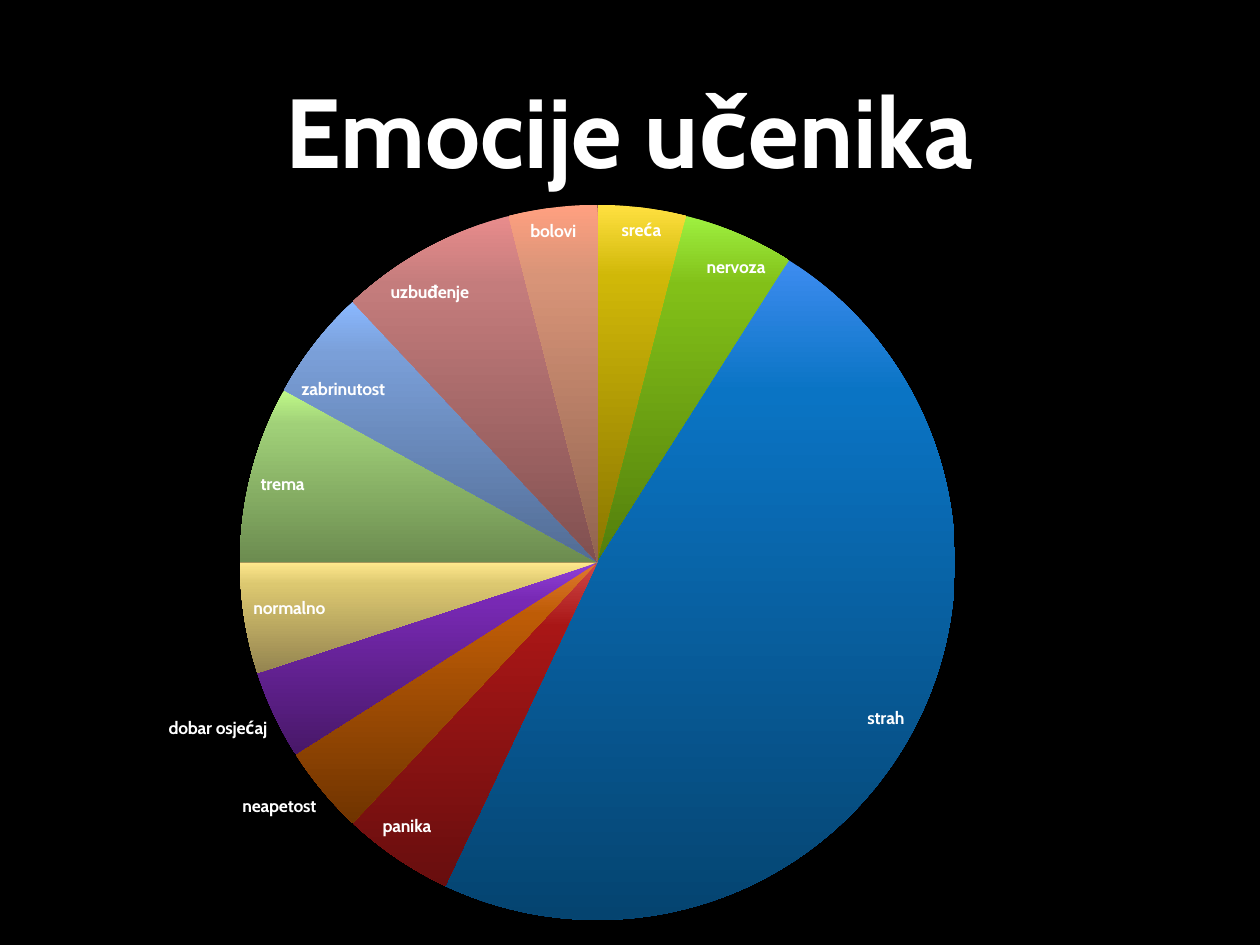
"""Build a slide with a pie chart of pupils' emotions."""
from copy import deepcopy

from lxml import etree
from pptx import Presentation
from pptx.chart.data import CategoryChartData
from pptx.dml.color import RGBColor
from pptx.enum.chart import XL_CHART_TYPE, XL_LABEL_POSITION
from pptx.enum.text import MSO_ANCHOR, PP_ALIGN
from pptx.oxml.ns import qn
from pptx.util import Inches, Pt

PIE = XL_CHART_TYPE.PIE
BEST_FIT = XL_LABEL_POSITION.BEST_FIT
MIDDLE = MSO_ANCHOR.MIDDLE
CENTER = PP_ALIGN.CENTER

TITLE = "Emocije učenika"
FONT = "Cabin"
EMOTIONS = [
    ("sreća", 4, "yellow"),
    ("nervoza", 5, "green"),
    ("strah", 48, "blue"),
    ("panika", 5, "red"),
    ("neapetost", 4, "orange"),
    ("dobar osjećaj", 4, "purple"),
    ("normalno", 5, "pale yellow"),
    ("trema", 8, "pale green"),
    ("zabrinutost", 5, "pale blue"),
    ("uzbuđenje", 8, "pale red"),
    ("bolovi", 4, "pale orange"),
]
COLORS = {"background": "000000", "text": "FFFFFF"}
GRADIENTS = {
    "yellow": ("FFE040", "D0B808", "8A7600"),
    "green": ("9EF040", "82C018", "527E0C"),
    "blue": ("3D8CF0", "0A74C4", "054470"),
    "red": ("D04848", "A81616", "680E0E"),
    "orange": ("E07830", "BE5C06", "703400"),
    "purple": ("9040D8", "7829B4", "481868"),
    "pale yellow": ("FFE88C", "DCC870", "948450"),
    "pale green": ("C0FA88", "A0D078", "6C8C50"),
    "pale blue": ("8AB8FF", "7A9FD8", "526C94"),
    "pale red": ("E88C8C", "C47C7C", "805050"),
    "pale orange": ("FFA080", "D89478", "906450"),
}
STOPS = (0, 0.2, 1)
WIDTH, HEIGHT = 10, 7.5
TITLE_AREA = (0.85, 0.12, 8.29, 1.81)
CHART_AREA = (-0.11, 0.9, 10.11, 6.6)
PLOT = {"x": 0.04, "y": 0.11, "w": 0.88, "h": 0.86}


def style_font(font, size):
    font.name = FONT
    font.size = Pt(size)
    font.bold = True
    font.color.rgb = RGBColor.from_string(COLORS["text"])


def add_title(page):
    box = page.shapes.add_textbox(*map(Inches, TITLE_AREA))
    frame = box.text_frame
    frame.word_wrap = True
    frame.vertical_anchor = MIDDLE
    frame.text = TITLE
    para = frame.paragraphs[0]
    para.alignment = CENTER
    style_font(para.runs[0].font, 56)


def place_plot(chart):
    plot_area = chart.plots[0]._element.getparent()
    for old in plot_area.findall(qn("c:layout")):
        plot_area.remove(old)
    layout = etree.Element(qn("c:layout"))
    manual = etree.SubElement(layout, qn("c:manualLayout"))
    settings = {"layoutTarget": "inner", "xMode": "edge", "yMode": "edge", **PLOT}
    for name, value in settings.items():
        etree.SubElement(manual, qn(f"c:{name}"), val=str(value))
    plot_area.insert(0, layout)


def fill_slices(series):
    for index, (_, _, color) in enumerate(EMOTIONS):
        point_format = series.points[index].format
        point_format.line.fill.background()
        fill = point_format.fill
        fill.gradient()
        fill.gradient_angle = 270
        stop_list = series._element.xpath(".//a:gsLst")[-1]
        stop_list.insert(1, deepcopy(stop_list[0]))
        for stop, position, shade in zip(fill.gradient_stops, STOPS, GRADIENTS[color]):
            stop.position = position
            stop.color.rgb = RGBColor.from_string(shade)


def add_pie(page):
    names, values, _ = zip(*EMOTIONS)
    data = CategoryChartData()
    data.categories = names
    data.add_series("Series 1", values)
    chart = page.shapes.add_chart(PIE, *map(Inches, CHART_AREA), data).chart
    chart.has_title = False
    chart.has_legend = False
    style_font(chart.font, 10)
    plot = chart.plots[0]
    plot.vary_by_categories = True
    plot.has_data_labels = True
    labels = plot.data_labels
    style_font(labels.font, 10)
    labels.show_value = False
    labels.show_category_name = True
    labels.position = BEST_FIT
    place_plot(chart)
    fill_slices(plot.series[0])


def main():
    deck = Presentation()
    deck.slide_width, deck.slide_height = Inches(WIDTH), Inches(HEIGHT)
    page = deck.slides.add_slide(deck.slide_layouts[6])
    page.background.fill.solid()
    page.background.fill.fore_color.rgb = RGBColor.from_string(COLORS["background"])
    add_title(page)
    add_pie(page)
    deck.save("out.pptx")


if __name__ == "__main__":
    main()
